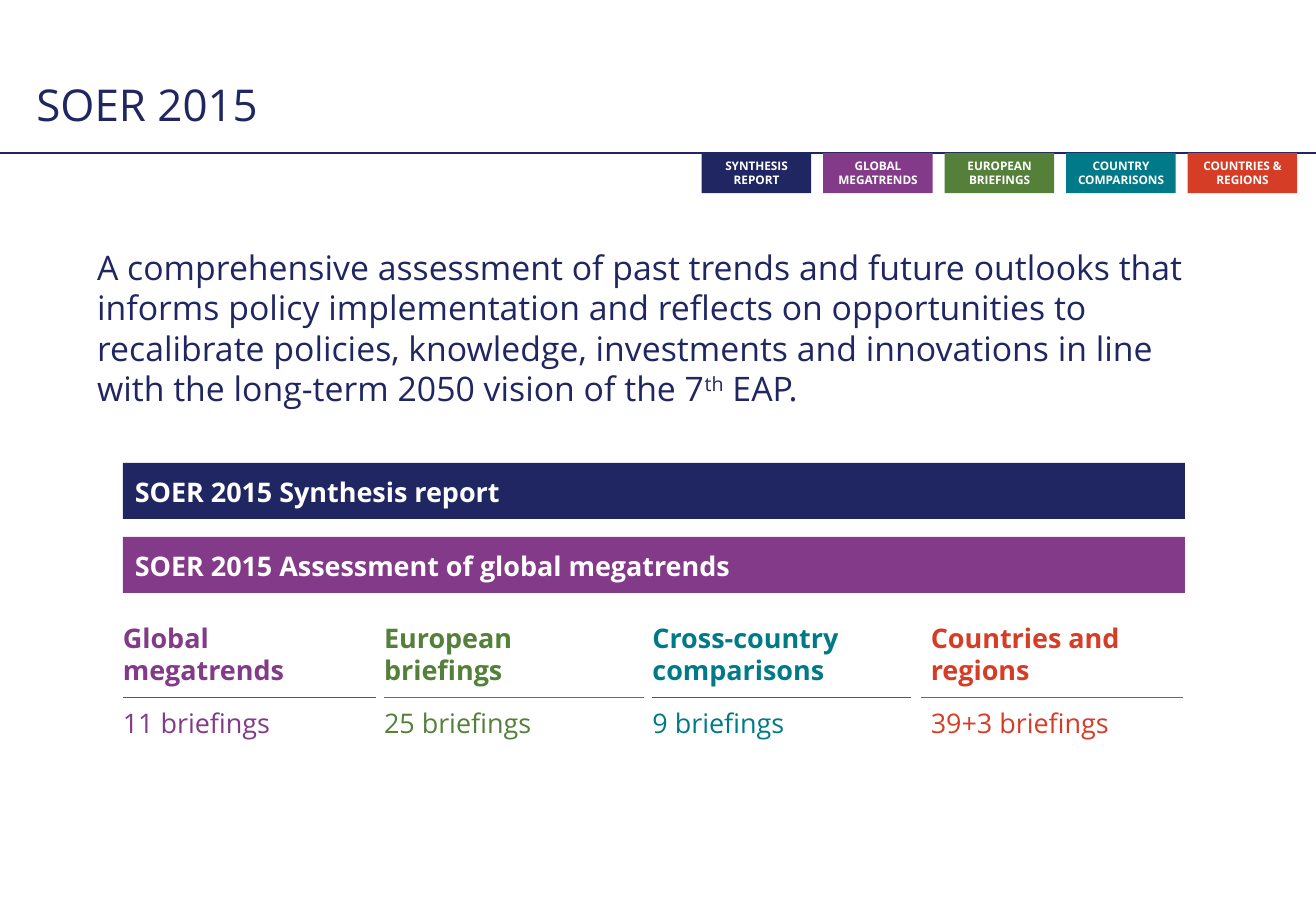
from typing import NamedTuple

from lxml import etree
from pptx import Presentation
from pptx import util as u
from pptx.dml.color import RGBColor
from pptx.enum import shapes, text
from pptx.oxml import ns

FONT = "Open Sans"
NAVY, PURPLE, GREEN, TEAL, RED = "202661", "833A88", "54803A", "007A88", "D63D27"
WHITE = "FFFFFF"
LEFT, CENTER = text.PP_ALIGN.LEFT, text.PP_ALIGN.CENTER
TOP, MIDDLE = text.MSO_ANCHOR.TOP, text.MSO_ANCHOR.MIDDLE


class Label(NamedTuple):
    wording: str
    fill: str


class Column(NamedTuple):
    heading: str
    count: str
    color: str
    left: float
    width: float
    rule_start: float
    rule_end: float


TABS = [
    Label("SYNTHESIS\nREPORT", NAVY),
    Label("GLOBAL\nMEGATRENDS", PURPLE),
    Label("EUROPEAN\nBRIEFINGS", GREEN),
    Label("COUNTRY COMPARISONS", TEAL),
    Label("COUNTRIES & REGIONS", RED),
]
BARS = [
    Label("SOER 2015 Synthesis report", NAVY),
    Label("SOER 2015 Assessment of global megatrends", PURPLE),
]
COLUMNS = [
    Column("Global\nmegatrends", "11 briefings", PURPLE, 2.57, 4.24, 2.57, 7.85),
    Column("European\nbriefings", "25 briefings", GREEN, 8.03, 4.24, 8.03, 13.46),
    Column("Cross-country\ncomparisons", "9 briefings", TEAL, 13.64, 5.21, 13.64, 19.05),
    Column("Countries and regions", "39+3 briefings", RED, 19.46, 4.45, 19.25, 24.74),
]
SUMMARY = [
    "A comprehensive assessment of past trends and future outlooks that informs "
    "policy implementation and reflects on opportunities to recalibrate policies, "
    "knowledge, investments and innovations in line with the long-term 2050 vision "
    "of the 7",
    "th",
    " EAP.",
]


def rgb(color: str) -> RGBColor:
    return RGBColor.from_string(color)


def format_text(frame, size: float, color: str, bold: bool = False,
                align=LEFT, anchor=TOP, insets=(0.25, 0.13, 0.25, 0.13)) -> None:
    """Format every run of a frame; insets are left, top, right, bottom in cm."""
    frame.word_wrap = True
    frame.auto_size = text.MSO_AUTO_SIZE.NONE
    frame.vertical_anchor = anchor
    (frame.margin_left, frame.margin_top,
     frame.margin_right, frame.margin_bottom) = map(u.Cm, insets)
    for para in frame.paragraphs:
        para.alignment = align
        para.space_before = u.Pt(0)
        for span in para.runs:
            span.font.name = FONT
            span.font.size = u.Pt(size)
            span.font.bold = bold
            span.font.color.rgb = rgb(color)


def add_rule(page, start: float, end: float, top: float, color: str) -> None:
    rule = page.shapes.add_connector(
        shapes.MSO_CONNECTOR.STRAIGHT, u.Cm(start), u.Cm(top), u.Cm(end), u.Cm(top))
    rule.line.color.rgb = rgb(color)
    rule.line.width = u.Pt(0.75)
    etree.SubElement(rule.element.spPr, ns.qn("a:effectLst"))


def add_block(page, label: Label, left: float, top: float,
              width: float, height: float):
    """Add a filled rectangle holding its label and return its text frame."""
    box = page.shapes.add_shape(
        shapes.MSO_SHAPE.RECTANGLE, *map(u.Cm, (left, top, width, height)))
    box.shadow.inherit = False
    box.fill.solid()
    box.fill.fore_color.rgb = rgb(label.fill)
    box.line.fill.background()
    box.text_frame.text = label.wording
    return box.text_frame


def add_text(page, wording: str, left: float, top: float, width: float, height: float):
    box = page.shapes.add_textbox(*map(u.Cm, (left, top, width, height)))
    box.text_frame.text = wording
    return box.text_frame


def add_title(page) -> None:
    title = page.shapes.title
    title.left, title.top, title.width, title.height = map(
        u.Cm, (0.51, 1.5, 18.62, 0.64))
    title.text_frame.text = "SOER 2015"
    format_text(title.text_frame, 26, NAVY)


def add_summary(page) -> None:
    frame = add_text(page, "", 1.78, 5.03, 23.37, 3.68)
    para = frame.paragraphs[0]
    for wording in SUMMARY:
        para.add_run().text = wording
    format_text(frame, 20, NAVY)
    para.space_after = u.Pt(6)
    para.runs[1].font._element.set("baseline", "30000")


def add_column(page, column: Column) -> None:
    add_rule(page, column.rule_start, column.rule_end, 14.58, column.color)
    for wording, top, height, bold in ((column.heading, 13.0, 1.37, True),
                                       (column.count, 14.78, 0.69, False)):
        frame = add_text(page, wording, column.left, top, column.width, height)
        format_text(frame, 16, column.color, bold, insets=(0, 0, 0.25, 0))


def main() -> None:
    deck = Presentation()
    deck.slide_width, deck.slide_height = u.Cm(27.51), u.Cm(19.05)
    page = deck.slides.add_slide(deck.slide_layouts[5])

    add_rule(page, 0, 27.51, 3.2, NAVY)
    for index, tab in enumerate(TABS):
        frame = add_block(page, tab, 14.67 + 2.54 * index, 3.2, 2.29, 0.84)
        format_text(frame, 7, WHITE, True, CENTER, MIDDLE, (0.1, 0.1, 0.1, 0.1))

    add_title(page)
    add_summary(page)
    for index, bar in enumerate(BARS):
        frame = add_block(page, bar, 2.57, 9.68 + 1.55 * index, 22.2, 1.17)
        format_text(frame, 16, WHITE, True, anchor=MIDDLE, insets=(0.25, 0.05, 0.25, 0))
    for column in COLUMNS:
        add_column(page, column)

    deck.save("out.pptx")


if __name__ == "__main__":
    main()
